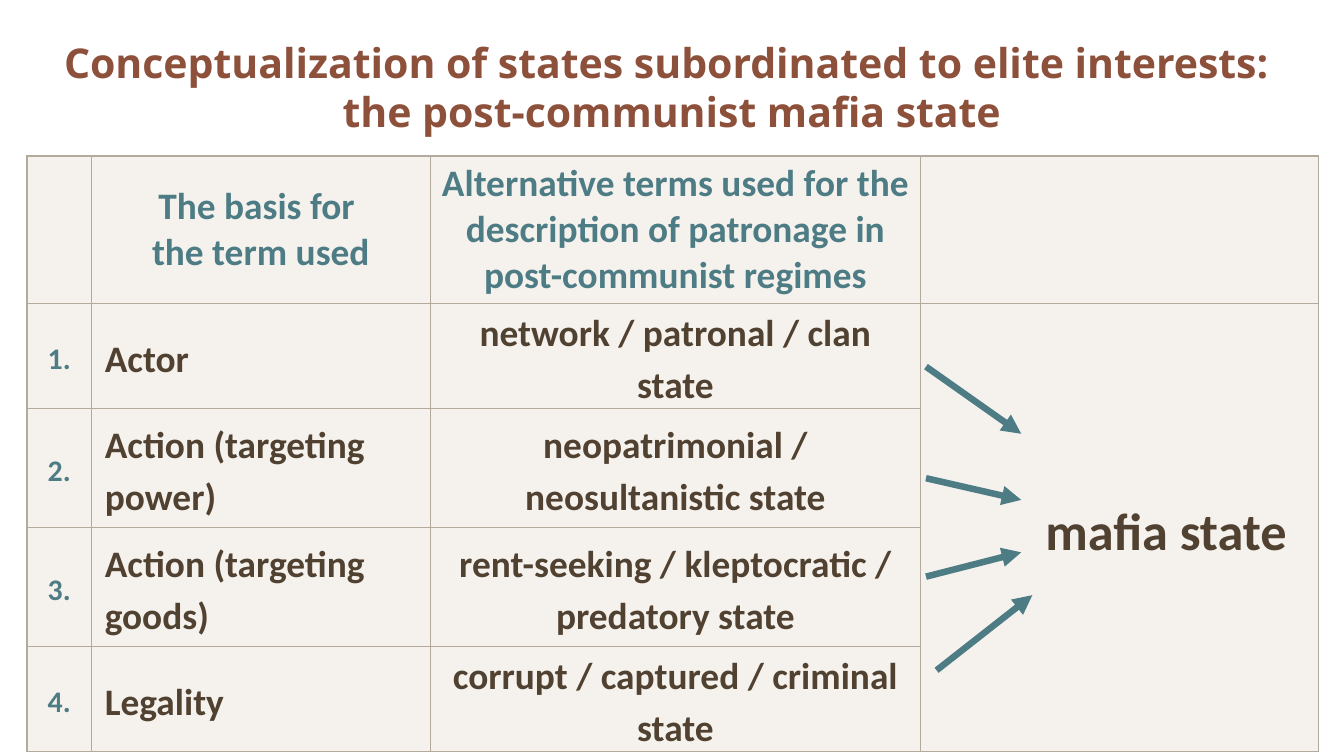
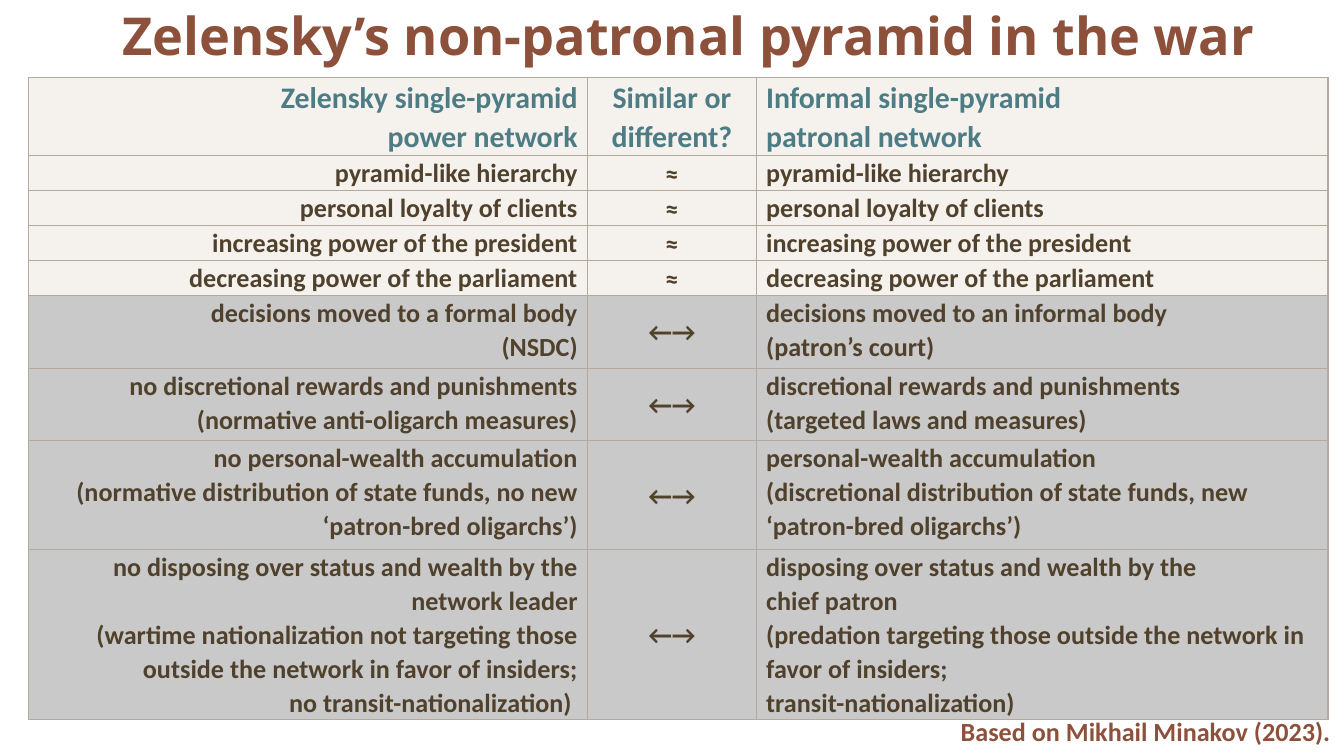
from copy import deepcopy
from dataclasses import dataclass, replace
from typing import Sequence

from lxml import etree
from pptx import Presentation
from pptx.dml.color import RGBColor
from pptx.enum.shapes import MSO_CONNECTOR
from pptx.enum.text import MSO_ANCHOR, MSO_AUTO_SIZE, PP_ALIGN
from pptx.oxml.ns import qn
from pptx.util import Cm, Pt

LEFT, CENTER, RIGHT = PP_ALIGN.LEFT, PP_ALIGN.CENTER, PP_ALIGN.RIGHT
TOP, MIDDLE = MSO_ANCHOR.TOP, MSO_ANCHOR.MIDDLE
STRAIGHT = MSO_CONNECTOR.STRAIGHT
NO_AUTOSIZE = MSO_AUTO_SIZE.NONE

COLOURS = {
    "white": "FFFFFF",
    "rust": "8D503B",
    "teal": "4D7C85",
    "brown": "504131",
    "umber": "50412C",
    "border": "B3A99D",
    "cream": "EFEAE4",
    "grey": "A6A6A6",
}
TITLE_FONT = "Open Sans"
BODY_FONT = "Calibri"
FILL_OPACITY = 60
TITLE_ONLY = 5


@dataclass(frozen=True)
class Box:
    left: float
    top: float
    width: float
    height: float


@dataclass(frozen=True)
class CellStyle:
    size: float
    colour: str
    alignment: PP_ALIGN = CENTER
    anchor: MSO_ANCHOR = MIDDLE
    margins: tuple[float, float] = (0.18, 0)
    line_spacing: float | None = None
    space_after: float | None = None
    indent: float = 0


@dataclass(frozen=True)
class Grid:
    box: Box
    columns: tuple[float, ...]
    rows: tuple[float, ...]
    inner_line: float
    outer_line: float
    heavy_sides: str


@dataclass(frozen=True)
class Arrow:
    start: tuple[float, float]
    end: tuple[float, float]


def colour_of(name: str) -> RGBColor:
    return RGBColor.from_string(COLOURS[name])


def write_text(text_frame, paragraphs: Sequence[str], *, size: float, colour: str,
               font: str = BODY_FONT, alignment=LEFT, line_spacing=None,
               space_after=None, indent: float = 0) -> None:
    text_frame.word_wrap = True
    for index, text in enumerate(paragraphs):
        paragraph = text_frame.paragraphs[0] if index == 0 else text_frame.add_paragraph()
        paragraph.text = text.replace("\n", "\v")
        paragraph.alignment = alignment
        if line_spacing:
            paragraph.line_spacing = line_spacing
        if space_after is not None:
            paragraph.space_after = Pt(space_after)
        if indent:
            paragraph._p.get_or_add_pPr().set("marL", str(Cm(indent)))
        for run in paragraph.runs:
            run.font.name = font
            run.font.size = Pt(size)
            run.font.bold = True
            run.font.color.rgb = colour_of(colour)
        for line_break in paragraph._p.findall(qn("a:br")):
            line_break.insert(0, deepcopy(paragraph.runs[0]._r.rPr))


def add_titled_slide(presentation, box: Box, lines: Sequence[str], size: float):
    slide = presentation.slides.add_slide(presentation.slide_layouts[TITLE_ONLY])
    slide.background.fill.solid()
    slide.background.fill.fore_color.rgb = colour_of("white")
    title = slide.shapes.title
    title.left, title.top = Cm(box.left), Cm(box.top)
    title.width, title.height = Cm(box.width), Cm(box.height)
    title.text_frame.auto_size = NO_AUTOSIZE
    title.text_frame.vertical_anchor = MIDDLE
    write_text(title.text_frame, lines, size=size, colour="rust",
               font=TITLE_FONT, alignment=CENTER)
    return slide


def set_borders(cell, widths: dict[str, float]) -> None:
    properties = cell._tc.get_or_add_tcPr()
    for index, side in enumerate("LRTB"):
        line = etree.Element(qn(f"a:ln{side}"), w=str(Pt(widths[side])))
        fill = etree.SubElement(line, qn("a:solidFill"))
        etree.SubElement(fill, qn("a:srgbClr"), val=COLOURS["border"])
        properties.insert(index, line)


def fill_cell(cell, colour: str) -> None:
    cell.fill.solid()
    cell.fill.fore_color.rgb = colour_of(colour)
    value = cell._tc.tcPr.find(f".//{qn('a:srgbClr')}")
    etree.SubElement(value, qn("a:alpha"), val=str(FILL_OPACITY * 1000))


def add_grid(slide, grid: Grid, fills: Sequence[str]):
    box = grid.box
    frame = slide.shapes.add_table(len(grid.rows), len(grid.columns), Cm(box.left),
                                   Cm(box.top), Cm(box.width), Cm(box.height))
    table = frame.table
    table.first_row = table.horz_banding = False
    for column, width in zip(table.columns, grid.columns):
        column.width = Cm(width)
    for row, height in zip(table.rows, grid.rows):
        row.height = Cm(height)
    frame.height = Cm(box.height)
    last_row, last_column = len(grid.rows) - 1, len(grid.columns) - 1
    for row_index, fill in enumerate(fills):
        for column_index in range(len(grid.columns)):
            cell = table.cell(row_index, column_index)
            fill_cell(cell, fill)
            on_edge = {"L": column_index == 0, "R": column_index == last_column,
                       "T": row_index == 0, "B": row_index == last_row}
            set_borders(cell, {
                side: grid.outer_line if edge and side in grid.heavy_sides else grid.inner_line
                for side, edge in on_edge.items()})
    return table


def write_cell(cell, paragraphs: Sequence[str], style: CellStyle) -> None:
    cell.vertical_anchor = style.anchor
    cell.margin_left = cell.margin_right = Cm(style.margins[0])
    cell.margin_top = cell.margin_bottom = Cm(style.margins[1])
    write_text(cell.text_frame, paragraphs, size=style.size, colour=style.colour,
               alignment=style.alignment, line_spacing=style.line_spacing,
               space_after=style.space_after, indent=style.indent)


def add_arrow(slide, arrow: Arrow) -> None:
    points = [Cm(value) for value in arrow.start + arrow.end]
    connector = slide.shapes.add_connector(STRAIGHT, *points)
    connector.line.color.rgb = colour_of("teal")
    connector.line.width = Pt(3.5)
    etree.SubElement(connector.line._get_or_add_ln(), qn("a:tailEnd"), type="triangle")
    etree.SubElement(connector._element.spPr, qn("a:effectLst"))


STATE_GRID = Grid(Box(0.51, 2.95, 24.41, 11.1), (1.22, 6.4, 9.27, 7.52),
                  (2.79,) + (1.35,) * 4, 0.75, 1, "LRTB")
STATE_ROWS = [
    ("Actor", "network / patronal / clan state"),
    ("Action (targeting power)", "neopatrimonial / neosultanistic state"),
    ("Action (targeting goods)", "rent-seeking / kleptocratic / predatory state"),
    ("Legality", "corrupt / captured / criminal state"),
]
STATE_ARROWS = [
    Arrow((17.5, 6.93), (19.3, 8.2)),
    Arrow((17.5, 9.04), (19.3, 9.45)),
    Arrow((17.5, 10.9), (19.3, 10.44)),
    Arrow((17.7, 12.67), (19.51, 11.25)),
]

PYRAMID_GRID = Grid(Box(0.53, 1.47, 24.57, 12.01), (10.57, 3.2, 10.8),
                    (1.37,) + (0.66,) * 4 + (1.37, 1.37, 2.06, 2.01), 0.5, 1, "RB")
PYRAMID_HEADER = ("Zelensky single-pyramid\npower network", "Similar or different?",
                  "Informal single-pyramid\npatronal network")
SIMILAR_FEATURES = [
    "pyramid-like hierarchy",
    "personal loyalty of clients",
    "increasing power of the president",
    "decreasing power of the parliament",
]
DIFFERENT_FEATURES = [
    ("decisions moved to a formal body\n(NSDC)",
     "decisions moved to an informal body\n(patron’s court)"),
    ("no discretional rewards and punishments\n(normative anti-oligarch measures)",
     "discretional rewards and punishments\n(targeted laws and measures)"),
    ("no personal-wealth accumulation\n"
     "(normative distribution of state funds, no new ‘patron-bred oligarchs’)",
     "personal-wealth accumulation\n"
     "(discretional distribution of state funds, new ‘patron-bred oligarchs’)"),
    ("no disposing over status and wealth by the network leader\n"
     "(wartime nationalization not targeting those outside the network in favor of insiders;\n"
     "no transit-nationalization) ",
     "disposing over status and wealth by the\nchief patron\n"
     "(predation targeting those outside the network in favor of insiders;\n"
     "transit-nationalization)"),
]


def build_mafia_state_slide(presentation) -> None:
    slide = add_titled_slide(
        presentation, Box(0.3, 0.36, 24.79, 2.54),
        ["Conceptualization of states subordinated to elite interests: ",
         "the post-communist mafia state"], 22)
    table = add_grid(slide, STATE_GRID, ["cream"] * len(STATE_GRID.rows))
    header = CellStyle(20, "teal")
    number = CellStyle(16, "teal", line_spacing=1.15)
    term = CellStyle(20, "brown", line_spacing=1.15)
    basis = replace(term, alignment=LEFT, margins=(0.25, 0.13))
    write_cell(table.cell(0, 1), ["The basis for ", "the term used"],
               replace(header, margins=(0.13, 0.13)))
    write_cell(table.cell(0, 2), ["Alternative terms used for the description of "
                                  "patronage in post-communist regimes"], header)
    for index, (basis_text, term_text) in enumerate(STATE_ROWS, start=1):
        write_cell(table.cell(index, 0), [f"{index}."], number)
        write_cell(table.cell(index, 1), [basis_text], basis)
        write_cell(table.cell(index, 2), [term_text], term)
    table.cell(1, 3).merge(table.cell(len(STATE_ROWS), 3))
    write_cell(table.cell(1, 3), ["mafia state"], replace(term, size=28, indent=1.75))
    for arrow in STATE_ARROWS:
        add_arrow(slide, arrow)


def build_pyramid_slide(presentation) -> None:
    slide = add_titled_slide(presentation, Box(0.61, 0.15, 24.79, 0.99),
                             ["Zelensky’s non-patronal pyramid in the war"], 28)
    rows = [PYRAMID_HEADER]
    rows += [(feature, "≈", feature) for feature in SIMILAR_FEATURES]
    rows += [(left, "←→", right) for left, right in DIFFERENT_FEATURES]
    fills = ["cream"] * (1 + len(SIMILAR_FEATURES)) + ["grey"] * len(DIFFERENT_FEATURES)
    table = add_grid(slide, PYRAMID_GRID, fills)
    header = CellStyle(16, "teal", anchor=TOP, line_spacing=1.07, space_after=6)
    feature = replace(header, size=14, colour="umber")
    for row_index, texts in enumerate(rows):
        style = feature if row_index else header
        for column_index, alignment in enumerate((RIGHT, CENTER, LEFT)):
            anchor = MIDDLE if row_index and alignment == CENTER else TOP
            write_cell(table.cell(row_index, column_index), [texts[column_index]],
                       replace(style, alignment=alignment, anchor=anchor))
    credit = slide.shapes.add_textbox(Cm(15.09), Cm(13.39), Cm(10.31), Cm(0.86))
    write_text(credit.text_frame, ["Based on Mikhail Minakov (2023)."],
               size=14, colour="rust", alignment=RIGHT)


def main() -> None:
    presentation = Presentation()
    presentation.slide_width, presentation.slide_height = Cm(25.4), Cm(14.29)
    build_mafia_state_slide(presentation)
    build_pyramid_slide(presentation)
    presentation.save("out.pptx")


if __name__ == "__main__":
    main()
